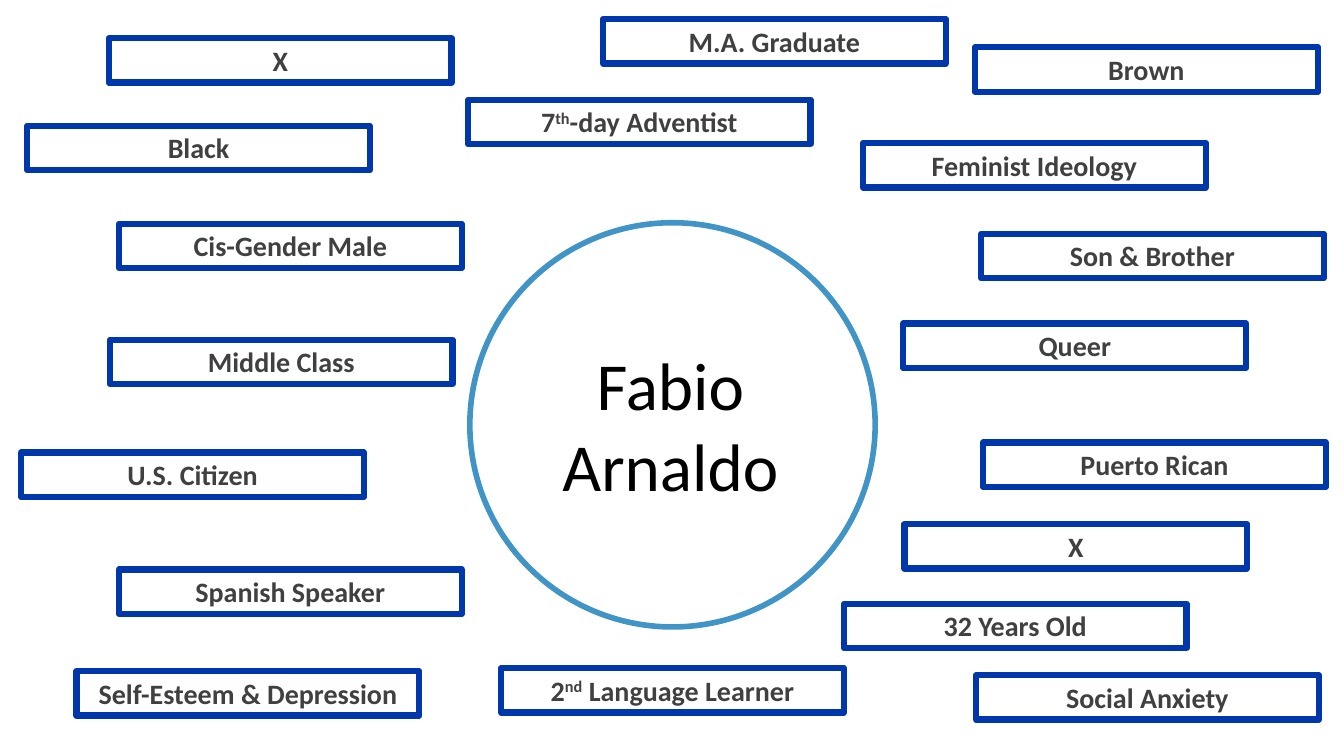
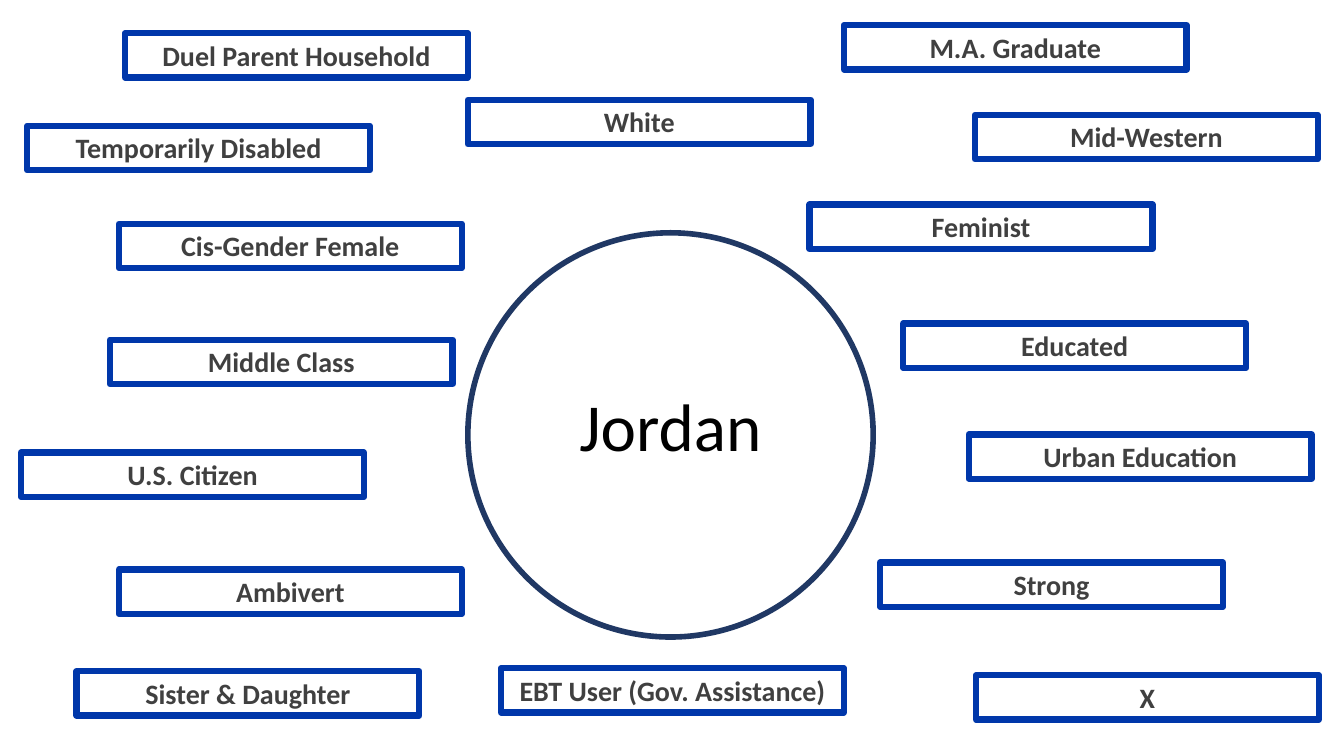
from pptx import Presentation
from pptx.dml.color import RGBColor
from pptx.enum import shapes, text
from pptx.util import Pt

PX = 9144  # 100 px to the inch
LABEL_BLUE = "0037AA"
LABEL_GREY = "404040"
LABEL_SIZE = (340, 44)
CIRCLE_SIZE = (402, 401)
NAME_BOX = (495, 363, 340, 116)

SHARED_SPOTS = [
    (27, 125), (118, 222), (109, 337), (21, 449), (118, 565),
    (76, 666), (497, 663), (968, 670), (896, 321), (464, 99),
]

people = [
    {
        "name": "Fabio Arnaldo",
        "circle": (466, 221),
        "circle_colour": "4194C6",
        "shared": [
            "Black", "Cis-Gender Male", "Middle Class", "U.S. Citizen", "Spanish Speaker",
            "Self-Esteem & Depression", "2^nd^ Language Learner", "Social Anxiety",
            "Queer", "7^th^-day Adventist",
        ],
        "own": [
            (108, 38, "X"),
            (598, 19, "M.A. Graduate"),
            (967, 47, "Brown"),
            (856, 142, "Feminist Ideology"),
            (973, 232, "Son & Brother"),
            (975, 439, "Puerto Rican"),
            (897, 520, "X"),
            (837, 599, "32 Years Old"),
        ],
    },
    {
        "name": "Jordan",
        "circle": (464, 231),
        "circle_colour": "203864",
        "shared": [
            "Temporarily Disabled", "Cis-Gender Female", "Middle Class", "U.S. Citizen", "Ambivert",
            "Sister & Daughter", "EBT User (Gov. Assistance)", "X",
            "Educated", "White",
        ],
        "own": [
            (124, 33, "Duel Parent Household"),
            (837, 25, "M.A. Graduate"),
            (967, 114, "Mid-Western"),
            (803, 203, "Feminist"),
            (961, 431, "Urban Education"),
            (873, 558, "Strong"),
        ],
    },
]


def add_outline(slide, preset, left, top, size, colour, weight):
    """Add an unfilled shape with a coloured border."""
    outline = slide.shapes.add_shape(preset, left * PX, top * PX, size[0] * PX, size[1] * PX)
    outline.shadow.inherit = False
    outline.fill.background()
    outline.line.color.rgb = RGBColor.from_string(colour)
    outline.line.width = Pt(weight)
    return outline


def write_centred(frame, wording, size, colour, bold):
    """Write one centred paragraph; parts between ^ marks are superscript."""
    paragraph = frame.paragraphs[0]
    paragraph.alignment = text.PP_ALIGN.CENTER
    for index, part in enumerate(wording.split("^")):
        run = paragraph.add_run()
        run.text = part
        for key, value in {"name": "Calibri", "size": Pt(size), "bold": bold}.items():
            setattr(run.font, key, value)
        run.font.color.rgb = RGBColor.from_string(colour)
        if index % 2:
            run._r.get_or_add_rPr().set("baseline", "30000")


prs = Presentation()
prs.slide_width, prs.slide_height = 1333 * PX, 750 * PX

for person in people:
    slide = prs.slides.add_slide(prs.slide_layouts[6])
    add_outline(slide, shapes.MSO_SHAPE.OVAL, *person["circle"], CIRCLE_SIZE,
                person["circle_colour"], 4)

    name_frame = slide.shapes.add_textbox(*(n * PX for n in NAME_BOX)).text_frame
    name_format = {
        "word_wrap": True,
        "vertical_anchor": text.MSO_ANCHOR.MIDDLE,
        "margin_left": 13 * PX,
        "margin_right": 13 * PX,
        "margin_top": 7 * PX,
        "margin_bottom": 7 * PX,
    }
    for key, value in name_format.items():
        setattr(name_frame, key, value)
    write_centred(name_frame, person["name"], 48, "000000", False)

    shared = [(*spot, trait) for spot, trait in zip(SHARED_SPOTS, person["shared"])]
    for left, top, trait in shared + person["own"]:
        label = add_outline(slide, shapes.MSO_SHAPE.RECTANGLE, left, top, LABEL_SIZE,
                            LABEL_BLUE, 4.5)
        label.text_frame.word_wrap = True
        label.text_frame.auto_size = text.MSO_AUTO_SIZE.SHAPE_TO_FIT_TEXT
        label.text_frame.vertical_anchor = text.MSO_ANCHOR.TOP
        write_centred(label.text_frame, trait, 20, LABEL_GREY, True)

prs.save("out.pptx")
